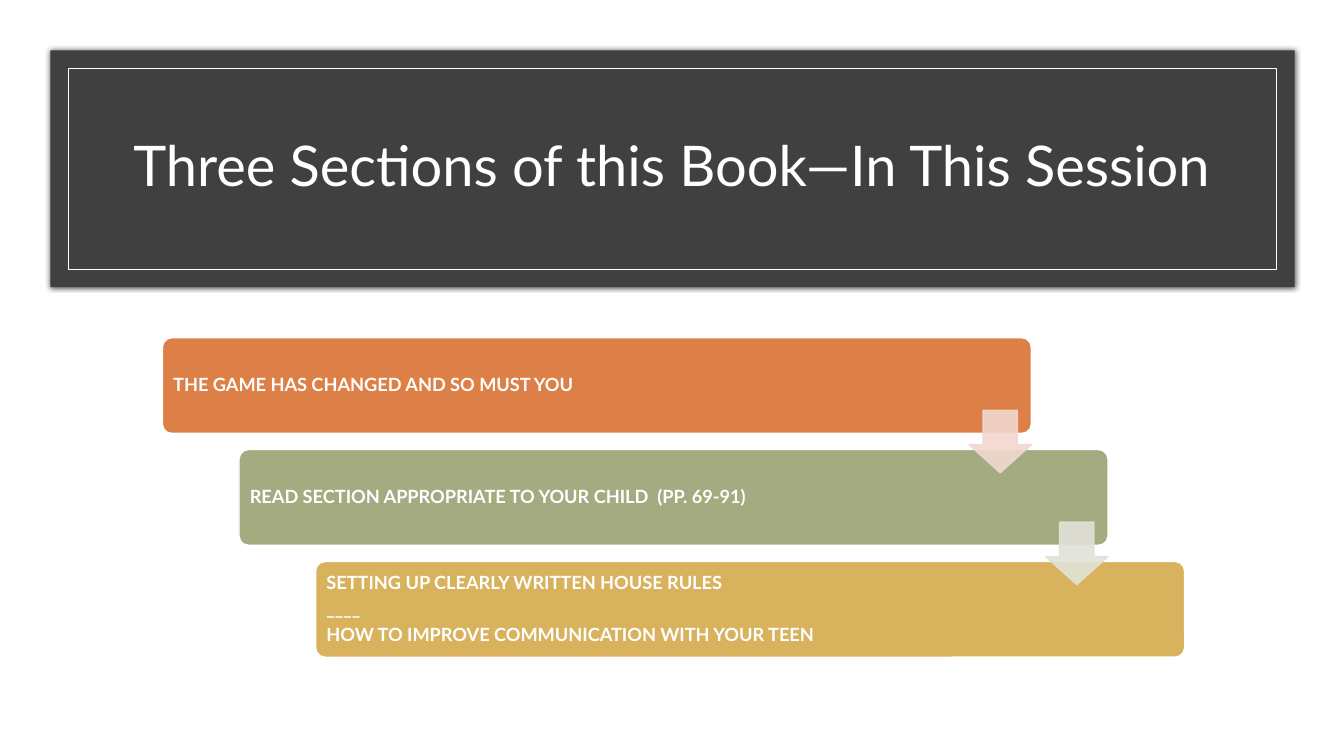
from lxml import etree
from pptx import Presentation
from pptx.dml.color import RGBColor
from pptx.enum.shapes import MSO_SHAPE
from pptx.enum.text import MSO_ANCHOR, MSO_AUTO_SIZE, PP_ALIGN
from pptx.oxml.ns import qn
from pptx.util import Inches, Pt

RECTANGLE = MSO_SHAPE.RECTANGLE
ROUNDED = MSO_SHAPE.ROUNDED_RECTANGLE
DOWN_ARROW = MSO_SHAPE.DOWN_ARROW
MIDDLE = MSO_ANCHOR.MIDDLE
NO_AUTOFIT = MSO_AUTO_SIZE.NONE
LEFT, CENTER = PP_ALIGN.LEFT, PP_ALIGN.CENTER
TITLE_ONLY = 5

FONT = "Lato"
COLORS = {
    "white": "FFFFFF", "panel": "404040", "shadow": "000000",
    "orange": "DD8047", "green": "A5AB81", "gold": "D8B25C",
    "pale orange": "F2D8CF", "pale green": "E1E2D8",
}
TITLE = "Three Sections of this Book—In This Session"
# Lines of the step, its colour, colour of the arrow to the next step
STEPS = [
    (["THE GAME HAS CHANGED AND SO MUST YOU"], "orange", "pale orange"),
    (["READ SECTION APPROPRIATE TO YOUR CHILD  (PP. 69-91)"],
     "green", "pale green"),
    (["SETTING UP CLEARLY WRITTEN HOUSE RULES", "____",
      "HOW TO IMPROVE COMMUNICATION WITH YOUR TEEN"], "gold", None),
]


def color(name):
    return RGBColor.from_string(COLORS[name])


def set_all(target, **values):
    for name, value in values.items():
        setattr(target, name, value)


def set_alpha(color_element, percent):
    etree.SubElement(color_element, qn("a:alpha"), val=str(percent * 1000))


def add_box(slide, kind, box, fill=None, line=None, width=1, adjustments=()):
    shape = slide.shapes.add_shape(kind, *(Inches(length) for length in box))
    for part, name in ((shape.fill, fill), (shape.line.fill, line)):
        if name:
            part.solid()
            part.fore_color.rgb = color(name)
        else:
            part.background()
    if line:
        shape.line.width = Pt(width)
    for index, value in enumerate(adjustments):
        shape.adjustments[index] = value
    shape.shadow.inherit = False
    return shape


def write(shape, lines, size, inset, align, bold=False, space_after=0):
    frame = shape.text_frame
    set_all(frame, text="\n".join(lines), word_wrap=True,
            auto_size=NO_AUTOFIT, vertical_anchor=MIDDLE,
            margin_left=Inches(inset), margin_right=Inches(inset),
            margin_top=Inches(0.05), margin_bottom=Inches(0.05))
    for para in frame.paragraphs:
        set_all(para, alignment=align, line_spacing=0.9,
                space_before=Pt(0), space_after=Pt(space_after))
        for span in para.runs:
            set_all(span.font, name=FONT, size=Pt(size), bold=bold)
            span.font.color.rgb = color("white")


def add_glow_shadow(shape, blur, percent):
    effects = shape.element.spPr.find(qn("a:effectLst"))
    shadow = etree.SubElement(effects, qn("a:outerShdw"),
                              blurRad=str(Pt(blur)), dist="0", dir="0")
    shade = etree.SubElement(shadow, qn("a:srgbClr"), val=COLORS["shadow"])
    set_alpha(shade, percent)


def add_title_panel(slide, box):
    left, top, width, height = box
    panel = add_box(slide, RECTANGLE, box, fill="panel")
    add_glow_shadow(panel, blur=4, percent=66)
    gap = 0.18
    frame_box = (left + gap, top + gap, width - 2 * gap, height - 2 * gap)
    add_box(slide, RECTANGLE, frame_box, line="white", width=0.5)

    title = slide.shapes.title
    set_all(title, left=Inches(left + 0.66), top=Inches(top + 0.42),
            width=Inches(11), height=Inches(1.5))
    write(title, [TITLE], size=40, inset=0.1, align=CENTER)
    title.element.getparent().append(title.element)


def add_staircase(slide, box):
    left, top, width, height = box
    step_right, step_down = 0.76, 1.11
    step_width = width - step_right * (len(STEPS) - 1)
    step_height = height - step_down * (len(STEPS) - 1)
    arrow_size = 0.62
    corners = [(left + step_right * index, top + step_down * index)
               for index in range(len(STEPS))]

    for (x, y), (lines, fill, _) in zip(corners, STEPS):
        step = add_box(slide, ROUNDED, (x, y, step_width, step_height),
                       fill, "white", adjustments=[0.1])
        write(step, lines, size=13, inset=0.08, align=LEFT, bold=True,
              space_after=4.55)

    for (x, y), (_, _, pale) in zip(corners, STEPS):
        if pale:
            arrow_box = (x + step_width - arrow_size, y + 0.72,
                         arrow_size, arrow_size)
            arrow = add_box(slide, DOWN_ARROW, arrow_box, pale, pale,
                            adjustments=[0.55, 0.45])
            for shade in arrow.element.spPr.iter(qn("a:srgbClr")):
                set_alpha(shade, 90)


def main():
    deck = Presentation()
    set_all(deck, slide_width=Inches(13.33), slide_height=Inches(7.5))
    slide = deck.slides.add_slide(deck.slide_layouts[TITLE_ONLY])
    slide.background.fill.solid()
    slide.background.fill.fore_color.rgb = color("white")
    add_title_panel(slide, (0.5, 0.5, 12.34, 2.35))
    add_staircase(slide, (1.61, 3.35, 10.14, 3.17))
    deck.save("out.pptx")


if __name__ == "__main__":
    main()
